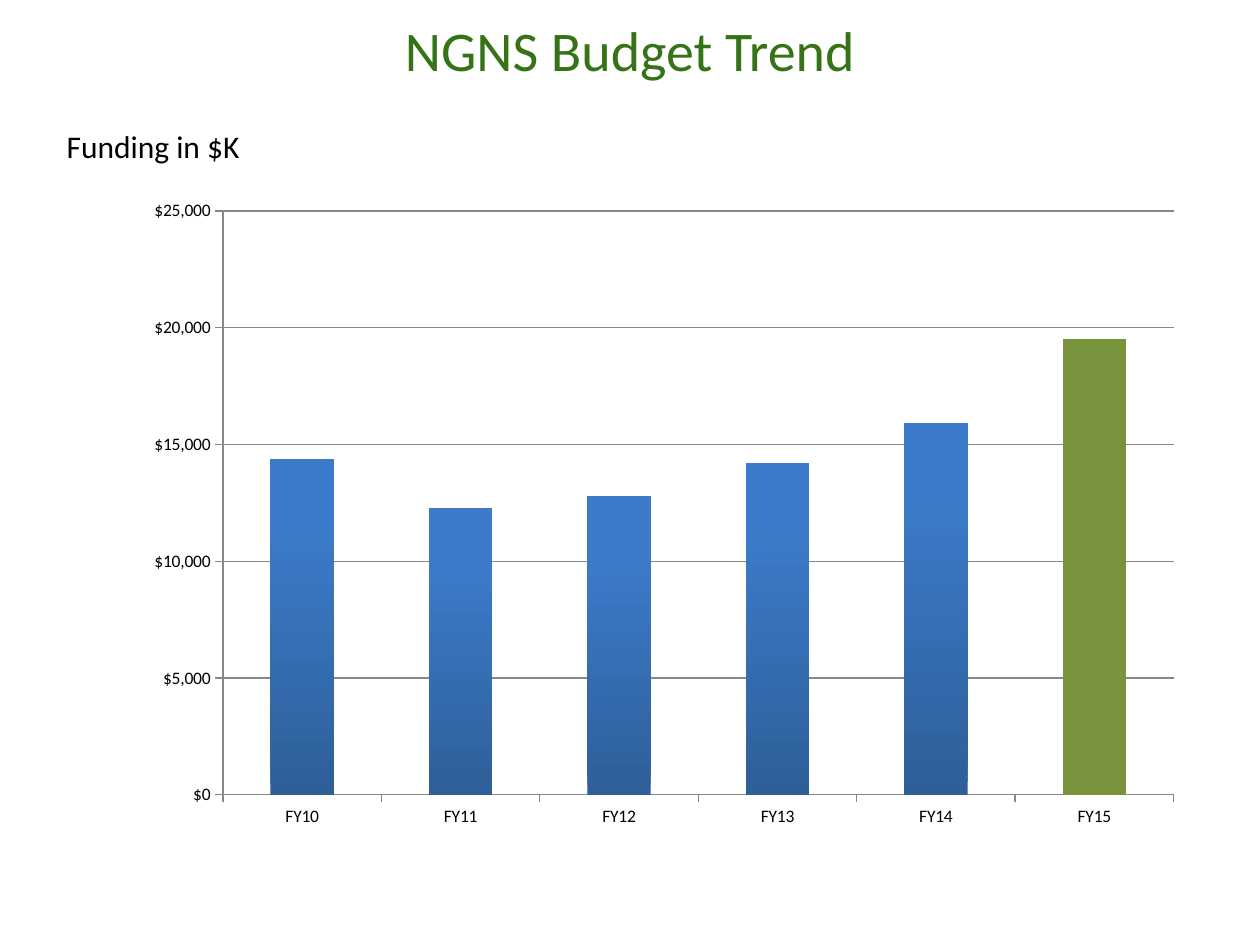
import pptx
import pptx.chart.data
import pptx.dml.color
import pptx.enum.chart
import pptx.enum.text
import pptx.oxml
import pptx.oxml.ns
import pptx.util

Pt = pptx.util.Pt
RGBColor = pptx.dml.color.RGBColor

# Content
TITLE = "NGNS Budget Trend"
UNITS = "Funding in $K"
FUNDING = {"FY10": 14400, "FY11": 12300, "FY12": 12800,
           "FY13": 14200, "FY14": 15900, "FY15": 19500}
HIGHLIGHT = "FY15"
PLOT_AREA = {"x": 0.15, "y": 0.04, "w": 0.82, "h": 0.83}

# Style
FONT = "Calibri"
BLACK = RGBColor(0x00, 0x00, 0x00)
TITLE_GREEN = RGBColor(0x36, 0x73, 0x17)
BAR_GREEN = RGBColor(0x77, 0x93, 0x3C)
BAR_STOPS = [(0, RGBColor(0x2E, 0x5F, 0x99)), (0.8, RGBColor(0x3C, 0x7B, 0xC9))]
LINE_GRAY = RGBColor(0x87, 0x87, 0x87)


def write(tf, text, size, color=BLACK, align=pptx.enum.text.PP_ALIGN.LEFT,
          anchor=pptx.enum.text.MSO_ANCHOR.TOP):
    tf.vertical_anchor = anchor
    p = tf.paragraphs[0]
    p.alignment = align
    r = p.add_run()
    r.text = text
    r.font.name = FONT
    r.font.size = Pt(size)
    r.font.color.rgb = color


def set_plot_layout(chart, box):
    """Fix the inner plot area as fractions of the chart frame."""
    plot_area = chart.plots[0]._element.getparent()
    for old in plot_area.findall(pptx.oxml.ns.qn("c:layout")):
        plot_area.remove(old)
    modes = "".join(f'<c:{k}Mode val="edge"/>' for k in "xy")
    sizes = "".join(f'<c:{k} val="{v}"/>' for k, v in box.items())
    plot_area.insert(0, pptx.oxml.parse_xml(
        f'<c:layout {pptx.oxml.ns.nsdecls("c")}><c:manualLayout>'
        f'<c:layoutTarget val="inner"/>{modes}{sizes}</c:manualLayout></c:layout>'))


prs = pptx.Presentation()
prs.slide_width, prs.slide_height = Pt(720), Pt(540)
s = prs.slides.add_slide(prs.slide_layouts[5])

# Funding chart
data = pptx.chart.data.CategoryChartData(number_format='"$"#,##0')
data.categories = list(FUNDING)
data.add_series("Series 1", list(FUNDING.values()))
chart = s.shapes.add_chart(pptx.enum.chart.XL_CHART_TYPE.COLUMN_CLUSTERED,
                           Pt(28), Pt(104.5), Pt(662.5), Pt(402), data).chart
chart.has_legend = False
chart.has_title = False
chart.font.name = FONT
chart.font.size = Pt(10)
chart.font.color.rgb = BLACK
set_plot_layout(chart, PLOT_AREA)

# Axes
for axis in (chart.category_axis, chart.value_axis):
    axis.major_tick_mark = pptx.enum.chart.XL_TICK_MARK.OUTSIDE
    axis.minor_tick_mark = pptx.enum.chart.XL_TICK_MARK.NONE
    axis.format.line.color.rgb = LINE_GRAY
    axis.format.line.width = Pt(0.75)
values = chart.value_axis
values.minimum_scale, values.maximum_scale, values.major_unit = 0, 25000, 5000
values.tick_labels.number_format = '"$"#,##0'
values.tick_labels.number_format_is_linked = False
values.has_major_gridlines = True
values.major_gridlines.format.line.color.rgb = LINE_GRAY
values.major_gridlines.format.line.width = Pt(0.75)

# Bars
plot = chart.plots[0]
plot.vary_by_categories = False
plot.gap_width = 150
series = plot.series[0]
fill = series.format.fill
fill.gradient()
fill.gradient_angle = 90
for stop, (position, color) in zip(fill.gradient_stops, BAR_STOPS):
    stop.position = position
    stop.color.rgb = color
point_fill = series.points[list(FUNDING).index(HIGHLIGHT)].format.fill
point_fill.solid()
point_fill.fore_color.rgb = BAR_GREEN

# Title
title = s.shapes.title
title.left, title.top, title.width, title.height = Pt(0), Pt(-17), Pt(720), Pt(90)
write(title.text_frame, TITLE, 32, color=TITLE_GREEN,
      align=pptx.enum.text.PP_ALIGN.CENTER,
      anchor=pptx.enum.text.MSO_ANCHOR.MIDDLE)

# Units label
tf = s.shapes.add_textbox(Pt(31), Pt(69), Pt(130), Pt(29)).text_frame
tf.word_wrap = True
tf.auto_size = pptx.enum.text.MSO_AUTO_SIZE.SHAPE_TO_FIT_TEXT
write(tf, UNITS, 18)

prs.save("out.pptx")
